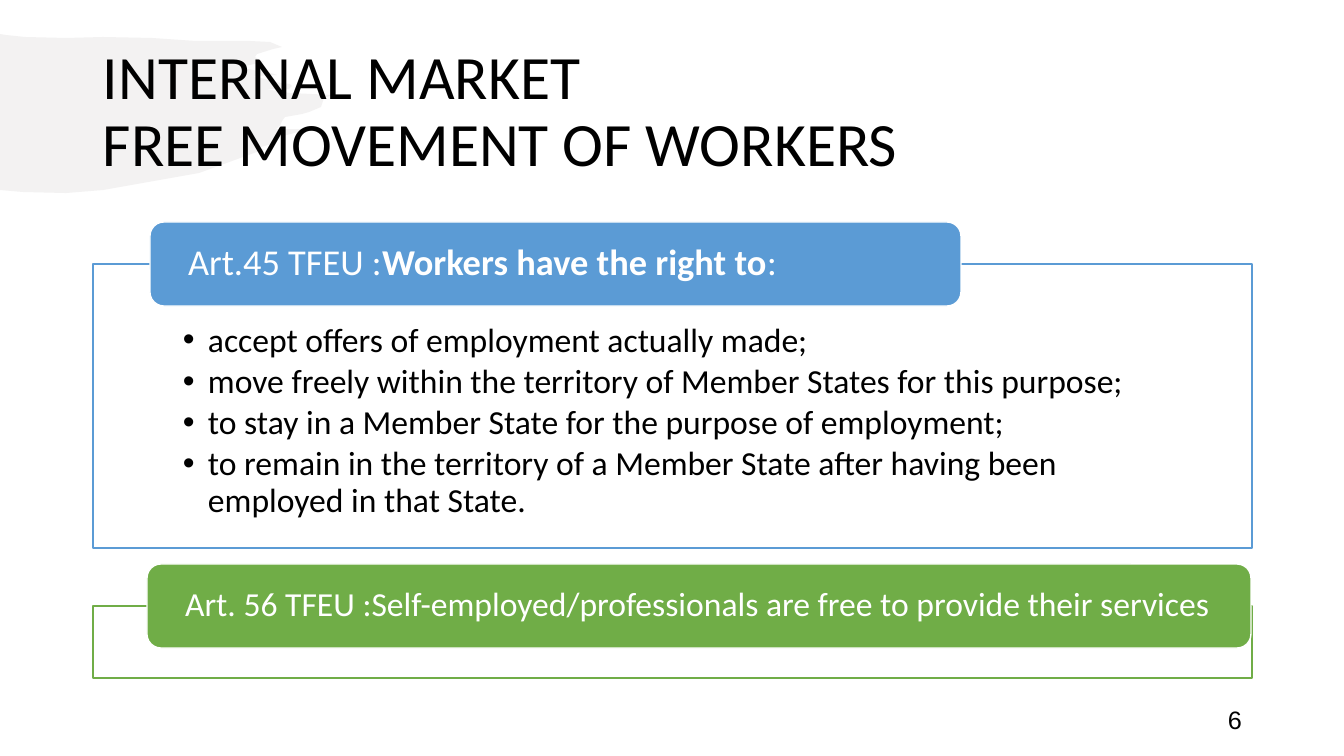
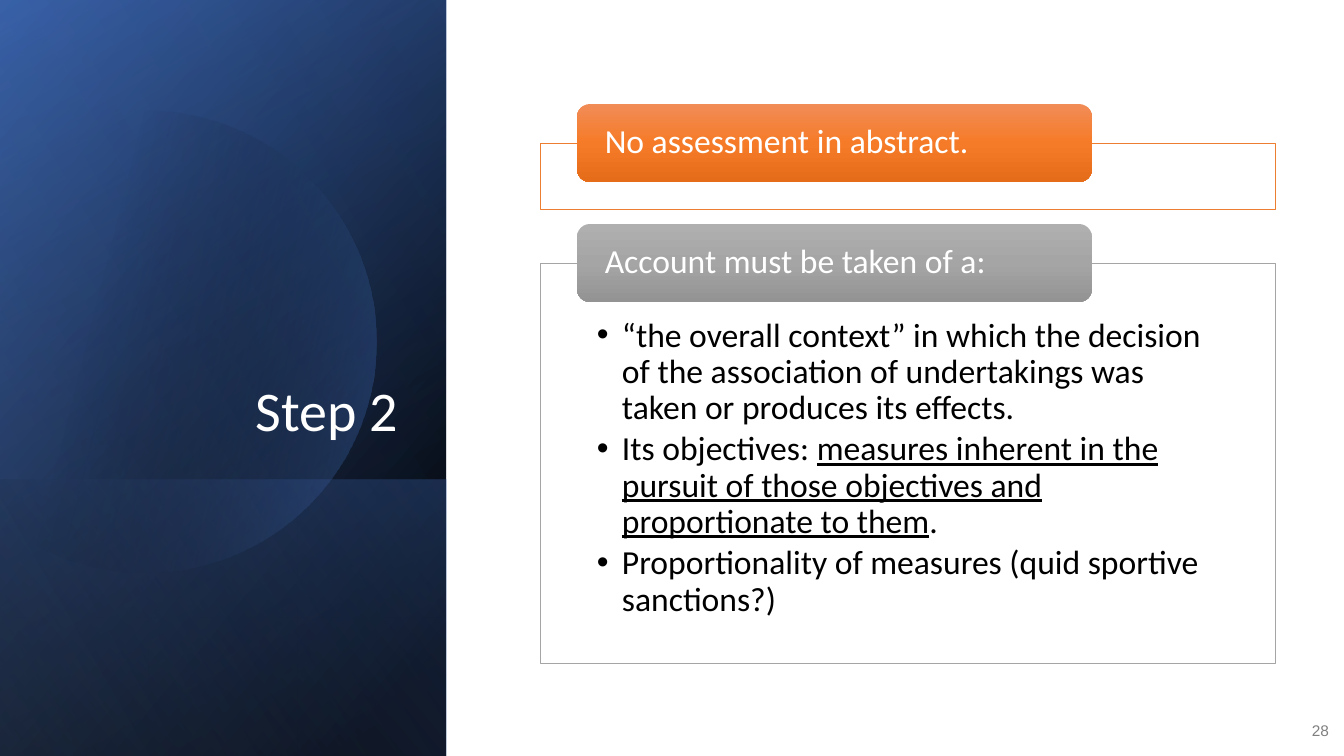
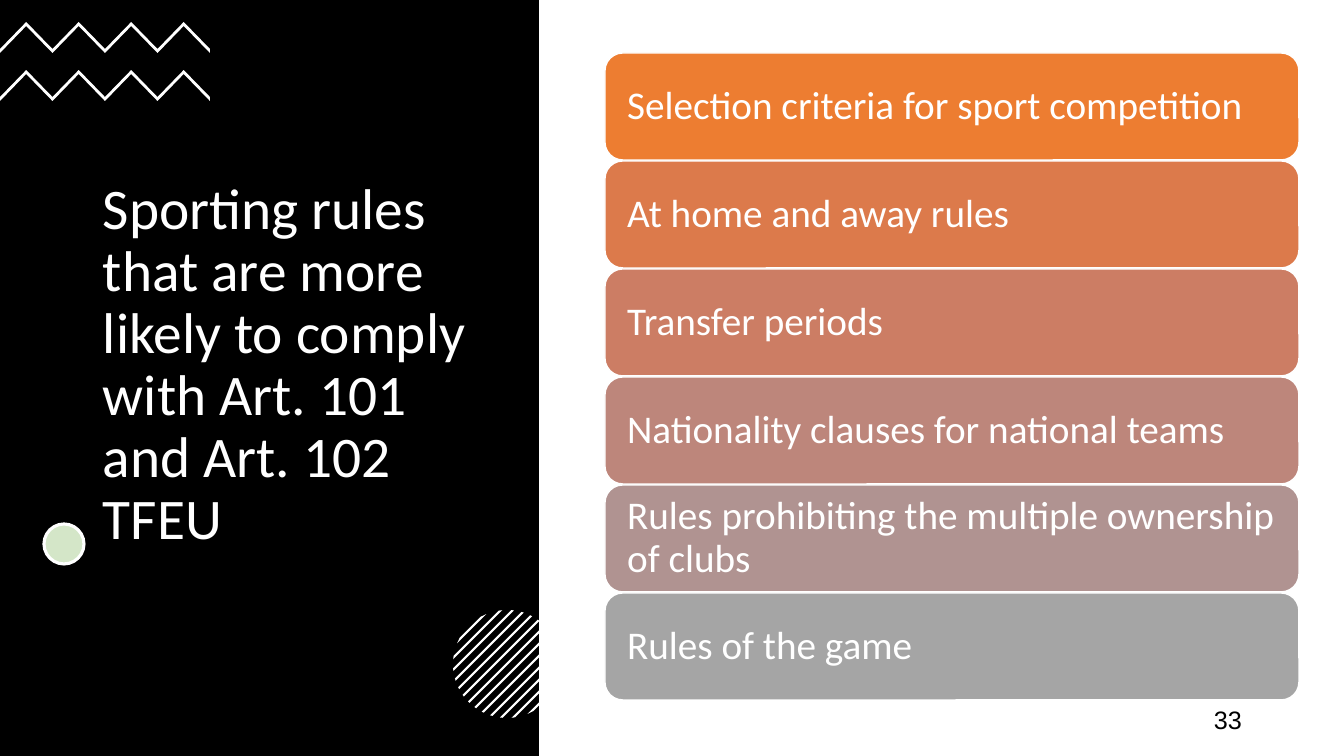
import collections
import math

import pptx
import pptx.dml.color
import pptx.enum.shapes
import pptx.enum.text
import pptx.oxml
import pptx.oxml.ns
import pptx.util

RGB = pptx.dml.color.RGBColor
SHAPE = pptx.enum.shapes.MSO_SHAPE
ALIGN = pptx.enum.text.PP_ALIGN
ANCHOR = pptx.enum.text.MSO_ANCHOR
qn = pptx.oxml.ns.qn

EMU_PER_PX = 914400 / 100.8
WIDTH, HEIGHT = 1344, 756

BLACK = RGB(0x00, 0x00, 0x00)
WHITE = RGB(0xFF, 0xFF, 0xFF)
BLUE = RGB(0x5B, 0x9B, 0xD5)
GREEN = RGB(0x70, 0xAD, 0x47)
ORANGE = RGB(0xED, 0x7D, 0x31)
GRAY = RGB(0xA5, 0xA5, 0xA5)
NAVY = RGB(0x2F, 0x55, 0x97)
ROYAL = RGB(0x44, 0x72, 0xC4)
SKY = RGB(0x8F, 0xAA, 0xDC)
PALE_GREEN = RGB(0xD4, 0xE6, 0xC8)
BRUSH_GRAY = RGB(0xF3, 0xF2, 0xF2)
NUMBER_GRAY = RGB(0x80, 0x80, 0x80)
RULE_COLORS = [ORANGE, RGB(0xDC, 0x7A, 0x4B), RGB(0xCC, 0x7D, 0x64),
               RGB(0xBD, 0x86, 0x7B), RGB(0xB0, 0x93, 0x91), GRAY]

# Stops are (position %, colour, opacity %); angle is in degrees, clockwise.
Gradient = collections.namedtuple("Gradient", "angle stops")

ORANGE_SHEEN = Gradient(90, [(0, RGB(0xF1, 0x8C, 0x57), 100),
                             (50, RGB(0xF6, 0x7B, 0x28), 100),
                             (100, RGB(0xE5, 0x6C, 0x19), 100)])
GRAY_SHEEN = Gradient(90, [(0, RGB(0xAF, 0xAF, 0xAF), 100),
                           (50, GRAY, 100),
                           (100, RGB(0x93, 0x93, 0x93), 100)])

BRUSH = [(0, 34), (6, 35), (25, 37), (66, 38), (103, 37), (152, 38), (196, 41),
         (250, 41), (270, 42), (282, 47), (273, 49), (257, 54), (255, 57),
         (258, 59), (264, 62), (240, 67), (248, 69), (258, 71), (268, 72),
         (277, 75), (253, 76), (265, 79), (275, 82), (282, 83), (290, 84),
         (292, 86), (289, 89), (265, 89), (290, 93), (333, 95), (324, 98),
         (321, 107), (309, 112), (302, 114), (285, 117), (282, 121),
         (280, 126), (276, 129), (310, 129), (271, 139), (275, 143),
         (254, 149), (265, 149), (199, 173), (103, 190), (66, 193),
         (23, 192), (0, 190)]


def px(n):
    return pptx.util.Emu(round(n * EMU_PER_PX))


def write(tf, paragraphs, size=24, color=BLACK, font="Calibri",
          align=ALIGN.LEFT, anchor=ANCHOR.MIDDLE, insets=(10, 5, 10, 5),
          after=0, bullet=False):
    """Fill a text frame; a paragraph is a string or a list of (text, font attributes)."""
    tf.word_wrap = True
    tf.auto_size = pptx.enum.text.MSO_AUTO_SIZE.NONE
    tf.vertical_anchor = anchor
    tf.margin_left, tf.margin_top, tf.margin_right, tf.margin_bottom = map(px, insets)
    for i, runs in enumerate(paragraphs):
        p = tf.add_paragraph() if i else tf.paragraphs[0]
        p.alignment = align
        p.line_spacing = 0.9
        p.space_before = pptx.util.Pt(0)
        p.space_after = pptx.util.Pt(after)
        if bullet:
            pPr = p._p.get_or_add_pPr()
            pPr.set("marL", str(px(25)))
            pPr.set("indent", str(px(-25)))
            for tag, name, value in (("a:buFont", "typeface", "Arial"),
                                     ("a:buChar", "char", "•")):
                pptx.oxml.ns  # namespace lookup for the bullet elements
                mark = pPr.makeelement(qn(tag), {name: value})
                pPr.append(mark)
        for text, extra in [(runs, {})] if isinstance(runs, str) else runs:
            for k, line in enumerate(text.split("\n")):
                if k:
                    p.add_line_break()
                r = p.add_run()
                r.text = line
                r.font.name = font
                r.font.size = pptx.util.Pt(size)
                r.font.color.rgb = color
                for name, value in extra.items():
                    setattr(r.font, name, value)


class Deck:
    """Holds the shared style and the slide being built."""

    def __init__(self):
        self.prs = pptx.Presentation()
        self.prs.slide_width, self.prs.slide_height = px(WIDTH), px(HEIGHT)
        self.s = None

    def slide(self, layout):
        self.s = self.prs.slides.add_slide(self.prs.slide_layouts[layout])

    def paint(self, sp, fill, line=None, width=1):
        sp.shadow.inherit = False
        if isinstance(fill, Gradient):
            self.shade(sp, fill)
        else:
            sp.fill.solid()
            sp.fill.fore_color.rgb = fill
        if line is None:
            sp.line.fill.background()
        else:
            sp.line.color.rgb = line
            sp.line.width = pptx.util.Pt(width)
        return sp

    def shade(self, sp, gradient):
        sp.fill.gradient()
        grad = sp.element.spPr.find(qn("a:gradFill"))
        grad.find(qn("a:lin")).set("ang", str(gradient.angle * 60000))
        stops = grad.find(qn("a:gsLst"))
        for old in list(stops):
            stops.remove(old)
        for position, color, opacity in gradient.stops:
            stops.append(pptx.oxml.parse_xml(
                f'<a:gs {pptx.oxml.ns.nsdecls("a")} pos="{position * 1000}">'
                f'<a:srgbClr val="{color}"><a:alpha val="{opacity * 1000}"/>'
                '</a:srgbClr></a:gs>'))

    def shape(self, kind, x, y, w, h, fill, line=None, width=1):
        sp = self.s.shapes.add_shape(kind, px(x), px(y), px(w), px(h))
        return self.paint(sp, fill, line, width)

    def outline(self, points, fill):
        """Draw a filled closed outline through points."""
        start, *rest = [(px(x), px(y)) for x, y in points]
        builder = self.s.shapes.build_freeform(*start)
        builder.add_line_segments(rest, close=True)
        return self.paint(builder.convert_to_shape(), fill)

    def placeholder(self, sp, x, y, w, h, paragraphs, **fmt):
        """Move a placeholder in front of what is already drawn and fill it."""
        sp.left, sp.top, sp.width, sp.height = px(x), px(y), px(w), px(h)
        sp.element.getparent().append(sp.element)
        write(sp.text_frame, paragraphs, **fmt)

    def title(self, x, y, w, h, text, **fmt):
        self.placeholder(self.s.shapes.title, x, y, w, h, [text], **fmt)

    def bullets(self, x, y, w, h, items, insets):
        self.placeholder(self.s.placeholders[1], x, y, w, h, items, insets=insets,
                         anchor=ANCHOR.TOP, after=3.6, bullet=True)

    def number(self, text, x=950, y=701, w=302, size=18, color=BLACK):
        sp = self.s.shapes.add_textbox(px(x), px(y), px(w), px(40))
        write(sp.text_frame, [text], size=size, color=color, font="Arial",
              align=ALIGN.RIGHT)

    def frame(self, x, y, w, h, line, width=1):
        self.shape(SHAPE.RECTANGLE, x, y, w, h, WHITE, line, width)

    def label(self, x, y, w, h, text, fill, inset, size=24, line=WHITE):
        sp = self.shape(SHAPE.ROUNDED_RECTANGLE, x, y, w, h, fill, line)
        write(sp.text_frame, [text], size=size, color=WHITE,
              insets=(inset, 0, inset, 0))

    def panel(self, y, h, gradient):
        """Draw a left panel turned a quarter and mirrored, its gradient with it."""
        w = 446
        sp = self.shape(SHAPE.RECTANGLE, (w - h) / 2, y + (h - w) / 2, h, w, gradient)
        sp.rotation = 90
        sp.element.spPr.find(qn("a:xfrm")).set("flipH", "1")

    def zigzag(self, y):
        upper = [(210 * i / 8, y + 27 * (1 - i % 2)) for i in range(9)]
        lower = [(x, top + 4) for x, top in reversed(upper)]
        self.outline(upper + lower, WHITE)

    def striped_disc(self, cx, cy, radius, count=13, pitch=12, thickness=3):
        """Draw diagonal stripes cut to a circle; pitch and thickness run along x."""
        root = math.sqrt(2)
        for k in range(count):
            middle = (k - count // 2) * pitch
            corners = []
            for edge, sign in ((-1, -1), (-1, 1), (1, 1), (1, -1)):
                d = (middle + edge * thickness / 2) / root
                t = sign * math.sqrt(radius ** 2 - d ** 2)
                corners.append((cx + (d + t) / root, cy + (d - t) / root))
            self.outline(corners, WHITE)


def workers_slide(deck):
    deck.slide(1)
    deck.outline(BRUSH, BRUSH_GRAY)
    deck.title(93, 40, 1159, 146, "INTERNAL MARKET\nFREE MOVEMENT OF WORKERS", size=44)
    deck.number("6")
    deck.frame(93, 264, 1159, 284, BLUE)
    deck.bullets(93, 264, 1159, 284, [
        "accept offers of employment actually made;",
        "move freely within the territory of Member States for this purpose;",
        "to stay in a Member State for the purpose of employment;",
        "to remain in the territory of a Member State after having been "
        "employed in that State.",
    ], insets=(90, 59, 90, 19))
    deck.label(150, 222, 811, 84, [("Art.45 TFEU :", {}),
                                   ("Workers have the right to", {"bold": True}),
                                   (":", {})], BLUE, inset=34, size=26)
    deck.frame(93, 606, 1159, 72, GREEN)
    deck.label(147, 564, 1104, 84,
               "Art. 56 TFEU :Self-employed/professionals are free to provide "
               "their services", GREEN, inset=34)


def step_slide(deck):
    deck.slide(1)
    deck.panel(0, HEIGHT, Gradient(50, [(8, BLACK, 100), (100, NAVY, 100)]))
    deck.panel(0, HEIGHT, Gradient(30, [(0, BLACK, 0), (99, ROYAL, 46)]))
    deck.panel(480, 276, Gradient(130, [(2, ROYAL, 29), (100, BLACK, 30)]))
    turns = [math.radians(3 * i) for i in range(120)]
    deck.outline([(max(0, 145 + 231 * math.cos(a)), 342 + 231 * math.sin(a))
                  for a in turns],
                 Gradient(14, [(29, BLACK, 0), (100, ROYAL, 43)]))
    deck.panel(0, HEIGHT, Gradient(120, [(0, BLACK, 0), (99, SKY, 11)]))
    deck.title(64, 185, 344, 264, "Step 2", size=40, color=WHITE,
               align=ALIGN.RIGHT, anchor=ANCHOR.BOTTOM)
    deck.number("28", x=1290, y=712, w=49, size=11, color=NUMBER_GRAY)
    deck.frame(540, 143, 735, 66, ORANGE, 0.5)
    deck.label(577, 104, 515, 78, "No assessment in abstract.", ORANGE_SHEEN,
               inset=24, line=None)
    deck.frame(540, 263, 735, 400, GRAY, 0.5)
    deck.bullets(540, 263, 735, 400, [
        "“the overall context” in which the decision of the association of "
        "undertakings was taken or produces its effects.",
        [("Its objectives: ", {}),
         ("measures inherent in the pursuit of those objectives and "
          "proportionate to them", {"underline": True}),
         (".", {})],
        "Proportionality of measures (quid sportive sanctions?)",
    ], insets=(57, 55, 57, 19))
    deck.label(577, 224, 515, 78, "Account must be taken of a:", GRAY_SHEEN,
               inset=24, line=None)


def rules_slide(deck):
    deck.slide(5)
    deck.shape(SHAPE.RECTANGLE, 0, 0, 539, HEIGHT, BLACK)
    deck.title(93, 132, 407, 467, "Sporting rules that are more likely to comply "
               "with Art. 101 and Art. 102 TFEU", size=41, color=WHITE)
    for y in (22, 70):
        deck.zigzag(y)
    deck.shape(SHAPE.OVAL, 44, 524, 40, 40, PALE_GREEN, WHITE, 2.25)
    deck.striped_disc(507, 664, 54)
    deck.number("33")
    rules = ["Selection criteria for sport competition", "At home and away rules",
             "Transfer periods", "Nationality clauses for national teams",
             "Rules prohibiting the multiple ownership of clubs",
             "Rules of the game"]
    for i, (rule, color) in enumerate(zip(rules, RULE_COLORS)):
        deck.label(605, 53 + 108 * i, 694, 107, rule, color, inset=17, size=28)


def main():
    deck = Deck()
    workers_slide(deck)
    step_slide(deck)
    rules_slide(deck)
    deck.prs.save("out.pptx")


if __name__ == "__main__":
    main()
